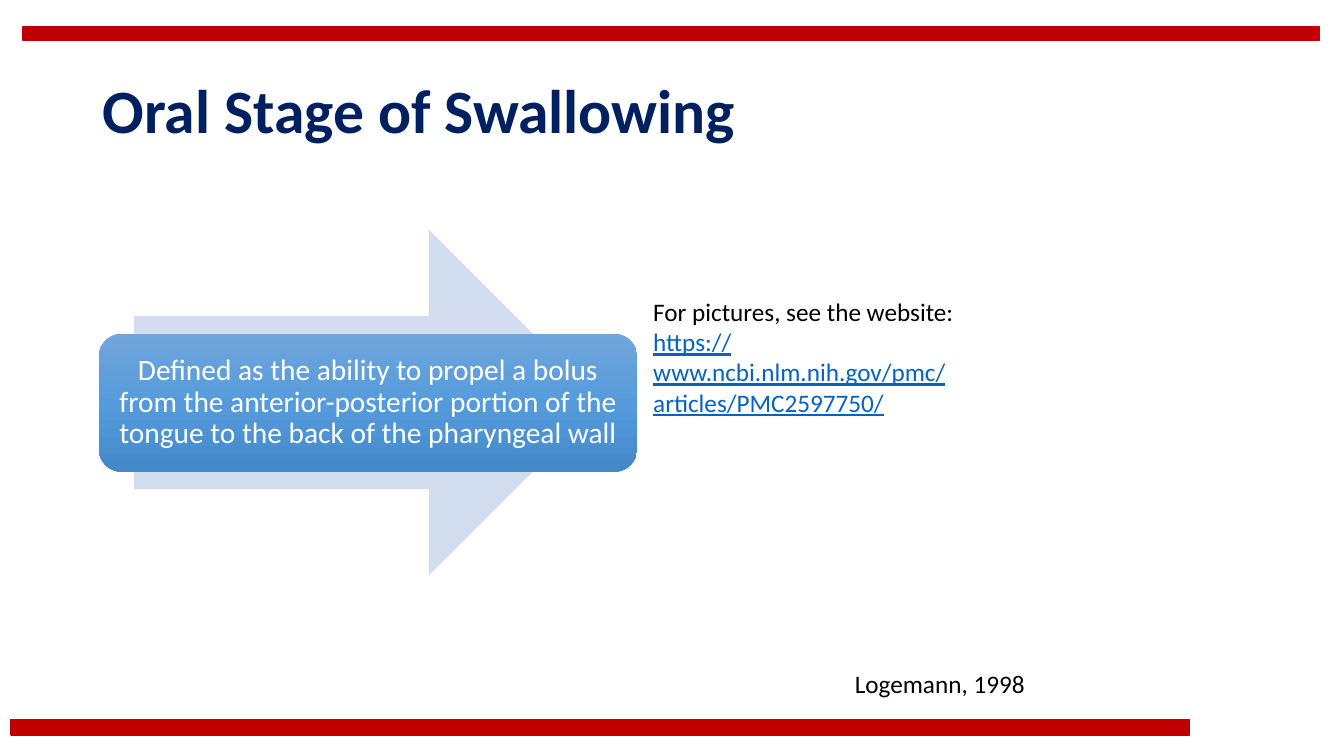
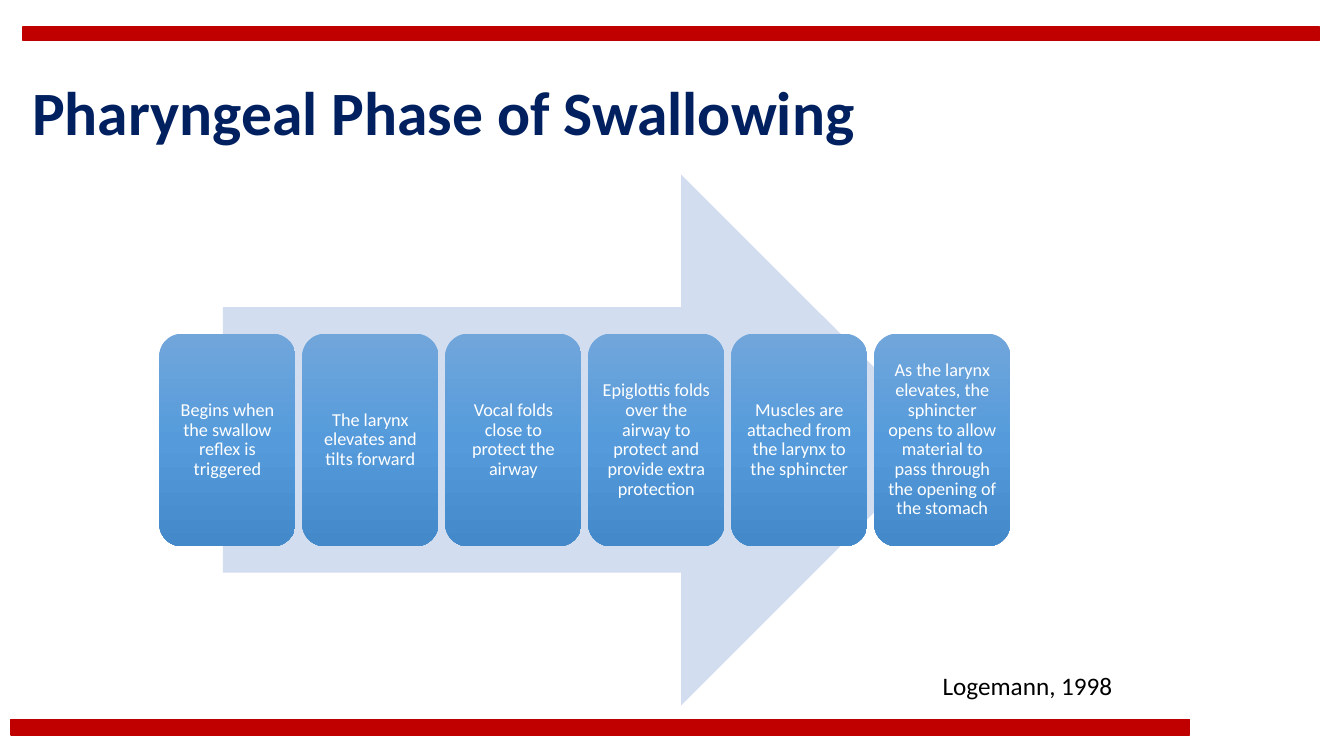
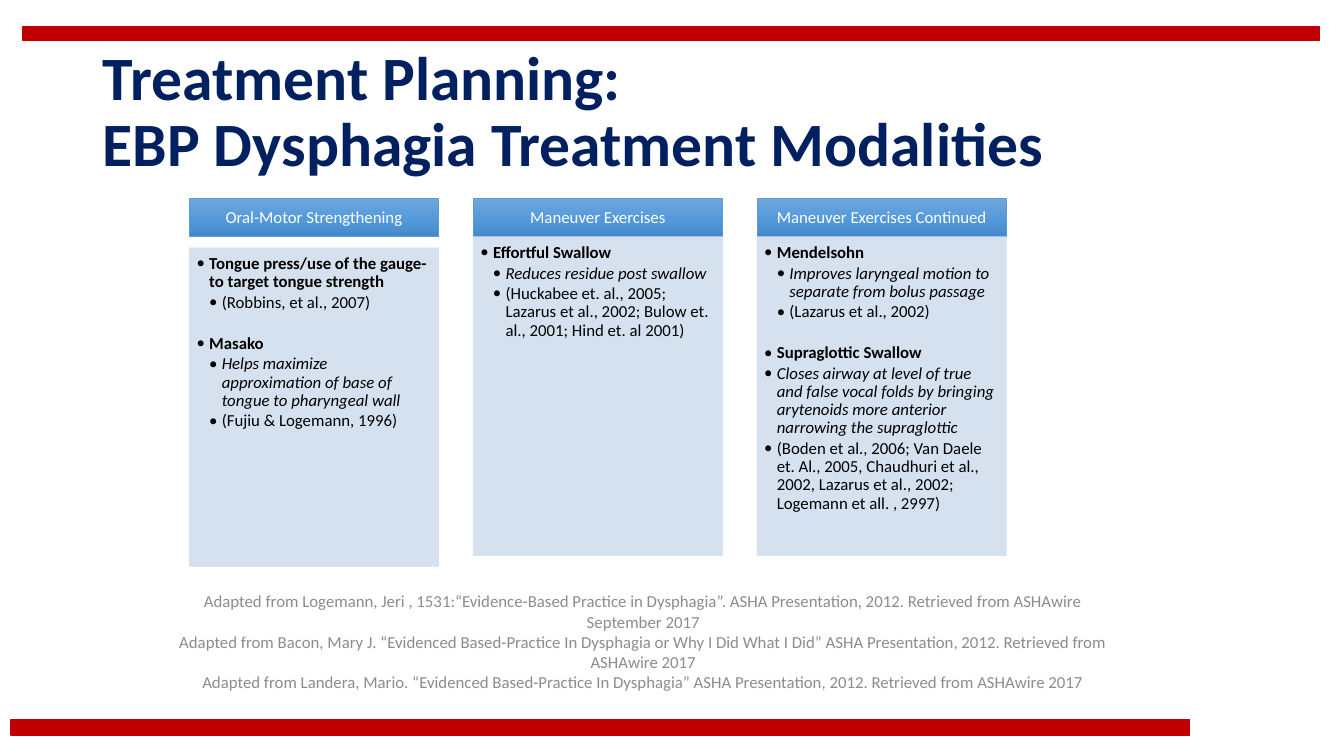
import copy

import pptx
import pptx.util
import pptx.dml.color
import pptx.enum.shapes
import pptx.enum.text
import pptx.oxml.ns
from lxml import etree

Inches = pptx.util.Inches
Pt = pptx.util.Pt
SHAPE = pptx.enum.shapes.MSO_SHAPE
ALIGN = pptx.enum.text.PP_ALIGN
ANCHOR = pptx.enum.text.MSO_ANCHOR
qn = pptx.oxml.ns.qn

COLORS = {
    "band": "C00000", "title": "002060", "text": "000000", "light": "FFFFFF",
    "link": "0563C1", "source": "8C8C8C", "pale": "D2DEEF", "edge": "5B9BD5",
}
GRADIENT = [(0, "71A6DB"), (0.5, "559BDB"), (1, "448ACA")]
FONT = "Calibri"
BANDS = [(0.11, 7.14, 11.69, 0.15), (0.23, 0.27, 12.86, 0.13)]
CITATION = "Logemann, 1998"

ORAL_TITLE = "Oral Stage of Swallowing"
ORAL_DEFINITION = (
    "Defined as the ability to propel a bolus from the anterior-posterior "
    "portion of the tongue to the back of the pharyngeal wall"
)
WEBSITE = [
    ("For pictures, see the website:", {}),
    ("https://www.ncbi.nlm.nih.gov/pmc/articles/PMC2597750/",
     {"color": "link", "underline": True}),
]

PHARYNGEAL_TITLE = "Pharyngeal Phase of Swallowing"
PHARYNGEAL_STEPS = [
    "Begins when the swallow reflex is triggered",
    "The larynx elevates and tilts forward",
    "Vocal folds close to protect the airway",
    "Epiglottis folds over the airway to protect and provide extra protection",
    "Muscles are attached from the larynx to the sphincter",
    "As the larynx elevates, the sphincter opens to allow material to pass "
    "through the opening of the stomach",
]

TREATMENT_TITLE = "Treatment Planning:\vEBP Dysphagia Treatment Modalities"
BOLD = {"bold": True}
ITALIC = {"italic": True}
TREATMENTS = [
    ("Oral-Motor Strengthening", 2.46, [
        (1, "Tongue press/use of the gauge-to target tongue strength", BOLD),
        (2, "(Robbins, et al., 2007)", {}),
        (1, "Masako", BOLD),
        (2, "Helps maximize approximation of base of tongue to pharyngeal wall", ITALIC),
        (2, "(Fujiu & Logemann, 1996)", {}),
    ]),
    ("Maneuver Exercises", 2.35, [
        (1, "Effortful Swallow", BOLD),
        (2, "Reduces residue post swallow", ITALIC),
        (2, "(Huckabee et. al., 2005; Lazarus et al., 2002; Bulow et. al., 2001; "
            "Hind et. al 2001)", {}),
    ]),
    ("Maneuver Exercises Continued", 2.35, [
        (1, "Mendelsohn", BOLD),
        (2, "Improves laryngeal motion to separate from bolus passage", ITALIC),
        (2, "(Lazarus et al., 2002)", {}),
        (1, "Supraglottic Swallow", BOLD),
        (1, "Closes airway at level of true and false vocal folds by bringing "
            "arytenoids more anterior narrowing the supraglottic", ITALIC),
        (1, "(Boden et al., 2006; Van Daele et. Al., 2005, Chaudhuri et al., 2002, "
            "Lazarus et al., 2002; Logemann et all. , 2997)", {}),
    ]),
]
SOURCES = [
    "Adapted from Logemann, Jeri , 1531:“Evidence-Based Practice in Dysphagia”. "
    "ASHA Presentation, 2012. Retrieved from ASHAwire September 2017",
    "Adapted from Bacon, Mary J. “Evidenced Based-Practice In Dysphagia or Why I "
    "Did What I Did” ASHA Presentation, 2012. Retrieved from ASHAwire 2017",
    "Adapted from Landera, Mario. “Evidenced Based-Practice In Dysphagia” ASHA "
    "Presentation, 2012. Retrieved from ASHAwire 2017",
]


def rgb(name):
    return pptx.dml.color.RGBColor.from_string(COLORS.get(name, name))


def apply(target, values):
    for name, value in values.items():
        setattr(target, name, value)


def spread(first, last, count):
    return [first + (last - first) * index / (count - 1) for index in range(count)]


def set_font(para, size, color="text", **values):
    apply(para.font, {"name": FONT, "size": Pt(size), **values})
    para.font.color.rgb = rgb(color)


def set_frame(shape, anchor=ANCHOR.TOP, insets=(0.1, 0.05, 0.1, 0.05)):
    sides = ("margin_left", "margin_top", "margin_right", "margin_bottom")
    apply(shape.text_frame, {"word_wrap": True, "vertical_anchor": anchor,
                             **dict(zip(sides, map(Inches, insets)))})
    return shape.text_frame


def add_paragraphs(frame, texts):
    for index, text in enumerate(texts):
        para = frame.add_paragraph() if index else frame.paragraphs[0]
        para.text = text
        yield para


def add_text(page, area, texts, size, color="text", anchor=ANCHOR.TOP,
             align=ALIGN.LEFT, spacing=1.0, **values):
    box = page.shapes.add_textbox(*map(Inches, area))
    paras = list(add_paragraphs(set_frame(box, anchor), texts))
    for para in paras:
        apply(para, {"alignment": align, "line_spacing": spacing})
        set_font(para, size, color, **values)
    return paras


def add_block(page, kind, area, fill=None, line=None, width=0.5):
    block = page.shapes.add_shape(kind, *map(Inches, area))
    block.shadow.inherit = False
    if fill:
        block.fill.solid()
        block.fill.fore_color.rgb = rgb(fill)
    else:
        fill_gradient(block)
    if line:
        block.line.color.rgb = rgb(line)
        block.line.width = Pt(width)
    else:
        block.line.fill.background()
    return block


def fill_gradient(block):
    block.fill.gradient()
    block.fill.gradient_angle = 270
    stops = block._element.spPr.find(".//" + qn("a:gsLst"))
    stops.insert(1, copy.deepcopy(stops[0]))
    for element, stop, (position, color) in zip(
            stops, block.fill.gradient_stops, GRADIENT):
        stop.color.rgb = rgb(color)
        element.set("pos", str(int(position * 100000)))


def set_opacity(block, percent):
    for color in block._element.spPr.iter(qn("a:srgbClr")):
        etree.SubElement(color, qn("a:alpha")).set("val", str(percent * 1000))


def add_label(page, kind, area, text, size, insets, line=None):
    block = add_block(page, kind, area, line=line)
    frame = set_frame(block, ANCHOR.MIDDLE, insets)
    for para in add_paragraphs(frame, [text]):
        apply(para, {"alignment": ALIGN.CENTER, "line_spacing": 0.9})
        set_font(para, size, "light")


def add_bullets(block, items):
    frame = set_frame(block, insets=(0.07, 0.07, 0.09, 0.1))
    paras = add_paragraphs(frame, [text for _, text, _ in items])
    indent = Inches(1) // 8
    previous = 1
    for index, (para, (level, _, style)) in enumerate(zip(paras, items)):
        properties = para._p.get_or_add_pPr()
        properties.set("marL", str(indent * level))
        properties.set("indent", str(-indent))
        etree.SubElement(properties, qn("a:buFont")).set("typeface", FONT)
        etree.SubElement(properties, qn("a:buChar")).set("char", "•")
        new_group = index > 0 and level < previous
        apply(para, {"alignment": ALIGN.LEFT, "line_spacing": 0.9,
                     "space_before": Pt(14.5 if new_group else 0),
                     "space_after": Pt(1.8)})
        set_font(para, 12, **style)
        previous = level


def add_page(deck, title, left=0.92, top=0.4):
    page = deck.slides.add_slide(deck.slide_layouts[6])
    for area in BANDS:
        add_block(page, SHAPE.RECTANGLE, area, "band", "band", 1)
    add_text(page, (left, top, 11.5, 1.45), [title], 44, "title",
             ANCHOR.MIDDLE, spacing=0.9, bold=True)
    return page


def build_oral(deck):
    page = add_page(deck, ORAL_TITLE)
    add_block(page, SHAPE.RIGHT_ARROW, (1.33, 2.28, 4.64, 3.43), "pale")
    add_label(page, SHAPE.ROUNDED_RECTANGLE, (0.98, 3.31, 5.34, 1.37),
              ORAL_DEFINITION, 21, (0.09,) * 4)
    add_text(page, (8.38, 6.58, 2.41, 0.4), [CITATION], 18)
    paras = add_text(page, (6.38, 2.89, 3.25, 1.31),
                     [text for text, _ in WEBSITE], 18)
    for para, (_, style) in zip(paras, WEBSITE):
        set_font(para, 18, **style)


def build_pharyngeal(deck):
    page = add_page(deck, PHARYNGEAL_TITLE, 0.22, 0.42)
    add_block(page, SHAPE.RIGHT_ARROW, (2.21, 1.73, 7.18, 5.27), "pale")
    lefts = spread(1.58, 8.67, len(PHARYNGEAL_STEPS))
    for left, step in zip(lefts, PHARYNGEAL_STEPS):
        add_label(page, SHAPE.ROUNDED_RECTANGLE, (left, 3.31, 1.35, 2.11),
                  step, 13, (0.05,) * 4)
    add_text(page, (9.25, 6.6, 2.41, 0.4), [CITATION], 18)


def build_treatment(deck):
    page = add_page(deck, TREATMENT_TITLE)
    width = 2.47
    lefts = spread(1.88, 7.51, len(TREATMENTS))
    for left, (heading, top, items) in zip(lefts, TREATMENTS):
        add_label(page, SHAPE.RECTANGLE, (left, 1.97, width, 0.38), heading,
                  12, (0.09, 0.05, 0.09, 0.05), "edge")
        body = add_block(page, SHAPE.RECTANGLE, (left, top, width, 3.16),
                         "pale", "pale")
        set_opacity(body, 90)
        add_bullets(body, items)
    add_text(page, (1.66, 5.88, 9.44, 0.97), SOURCES, 12, "source",
             ANCHOR.MIDDLE, ALIGN.CENTER)


def main():
    deck = pptx.Presentation()
    apply(deck, {"slide_width": Inches(13.33), "slide_height": Inches(7.5)})
    for build in (build_oral, build_pharyngeal, build_treatment):
        build(deck)
    deck.save("out.pptx")


if __name__ == "__main__":
    main()
